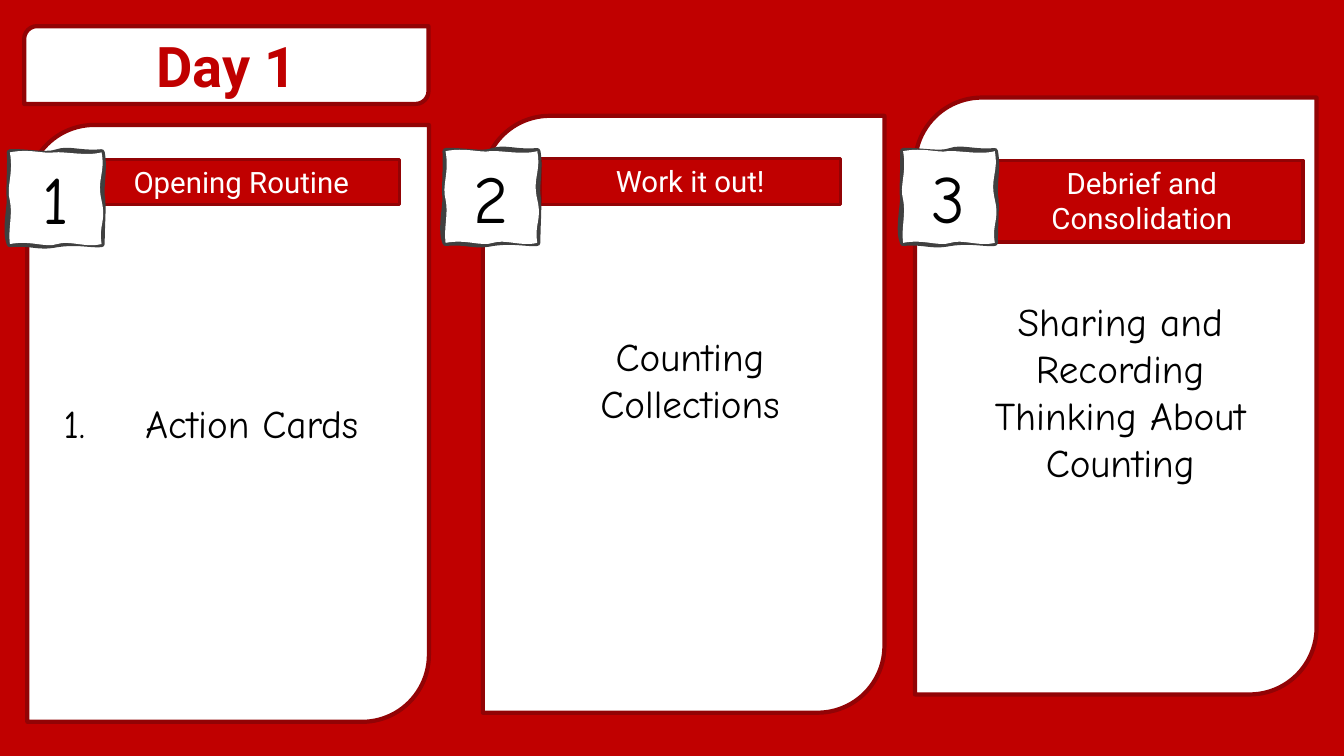
from dataclasses import dataclass

from pptx import Presentation
from pptx.dml.color import RGBColor
from pptx.enum.shapes import MSO_SHAPE as Preset
from pptx.enum.text import MSO_ANCHOR as Anchor, PP_ALIGN as Align
from pptx.oxml import parse_xml
from pptx.oxml.ns import nsdecls
from pptx.shapes.autoshape import Shape
from pptx.slide import Slide
from pptx.util import Cm, Pt


@dataclass(frozen=True)
class Theme:
    red: str = "C00000"
    dark_red: str = "920305"
    white: str = "FFFFFF"
    black: str = "000000"
    grey: str = "404040"
    heading_font: str = "Roboto"
    body_font: str = "Comic Neue"
    title_size: float = 40
    header_size: float = 21
    badge_size: float = 48
    body_size: float = 28
    panel_line: float = 3
    header_line: float = 2.25
    badge_line: float = 4.5


@dataclass(frozen=True)
class Area:
    """Left, top, width and height in centimetres."""
    left: float
    top: float
    width: float
    height: float

    def lengths(self) -> tuple[Cm, Cm, Cm, Cm]:
        return Cm(self.left), Cm(self.top), Cm(self.width), Cm(self.height)


@dataclass(frozen=True)
class TextStyle:
    font: str
    size: float
    color: str
    bold: bool = False
    anchor: Anchor = Anchor.TOP


@dataclass(frozen=True)
class Activity:
    panel: Area
    header: Area
    badge: tuple[float, float]
    body: Area
    heading: str
    text: str
    numbered: bool = False
    bottom_inset: float = 0.13


THEME = Theme()
TITLE = TextStyle(THEME.heading_font, THEME.title_size, THEME.red, True, Anchor.MIDDLE)
HEADER = TextStyle(THEME.heading_font, THEME.header_size, THEME.white)
BADGE = TextStyle(THEME.body_font, THEME.badge_size, THEME.black)
BODY = TextStyle(THEME.body_font, THEME.body_size, THEME.black, anchor=Anchor.MIDDLE)

TITLE_AREA = Area(0.61, 0.66, 10.19, 1.96)
PANEL_WIDTH, PANEL_HEIGHT = 10.12, 15.04
BADGE_SIDE = 2.31
BADGE_UNITS = 91
NUMBER_INDENT = 2.06

ACTIVITIES = [
    Activity(Area(0.69, 3.15, PANEL_WIDTH, PANEL_HEIGHT), Area(2.08, 4.01, 8, 1.14),
             (0.25, 3.84), Area(0.69, 9.93, 9.25, 1.45),
             "Opening Routine", "Action Cards", numbered=True),
    Activity(Area(12.17, 2.92, PANEL_WIDTH, PANEL_HEIGHT), Area(13.61, 3.99, 7.57, 1.17),
             (11.23, 3.81), Area(13.34, 8.13, 8.1, 4.01),
             "Work it out!", "Counting Collections", bottom_inset=1.3),
    Activity(Area(23.06, 2.46, PANEL_WIDTH, PANEL_HEIGHT), Area(24.71, 4.04, 8.13, 2.06),
             (22.76, 3.81), Area(24.18, 7.32, 8.1, 6.25),
             "Debrief and Consolidation", "Sharing and Recording Thinking About Counting",
             bottom_inset=1.3),
]

# Wavy badge edges: each curve is two control points and an end point
Curve = tuple[int, int, int, int, int, int]
STROKE_EDGE: list[Curve] = [
    (14, -1, 37, 4, 47, 0), (58, -4, 71, 2, 91, 0),
    (94, 15, 90, 34, 91, 43), (93, 53, 91, 70, 91, 91),
    (80, 92, 68, 88, 47, 91), (27, 95, 23, 89, 0, 91),
    (-5, 79, 0, 57, 0, 47), (-1, 37, 1, 10, 0, 0),
]
FILL_EDGE: list[Curve] = [
    (20, -4, 35, 2, 44, 0), (54, -1, 77, 4, 91, 0),
    (95, 21, 86, 26, 91, 48), (96, 69, 88, 71, 91, 91),
    (75, 95, 59, 87, 47, 91), (35, 95, 21, 87, 0, 91),
    (-2, 76, 3, 62, 0, 48), (-4, 34, 4, 22, 0, 0),
]


def rgb(color: str) -> RGBColor:
    return RGBColor.from_string(color)


def paint(shape: Shape, fill: str, line: str, weight: float) -> None:
    shape.shadow.inherit = False
    shape.fill.solid()
    shape.fill.fore_color.rgb = rgb(fill)
    shape.line.color.rgb = rgb(line)
    shape.line.width = Pt(weight)


def write(shape: Shape, text: str, style: TextStyle) -> None:
    frame = shape.text_frame
    frame.word_wrap = True
    frame.vertical_anchor = style.anchor
    para = frame.paragraphs[0]
    para.text = text
    para.alignment = Align.CENTER
    para.font.name = style.font
    para.font.size = Pt(style.size)
    para.font.bold = style.bold
    para.font.color.rgb = rgb(style.color)


def add_block(page: Slide, preset: Preset, area: Area, fill: str, weight: float) -> Shape:
    block = page.shapes.add_shape(preset, *area.lengths())
    paint(block, fill, THEME.dark_red, weight)
    return block


def path_xml(curves: list[Curve], flag: str) -> str:
    segments = "".join(
        "<a:cubicBezTo>"
        + "".join(f'<a:pt x="{x}" y="{y}"/>' for x, y in zip(curve[::2], curve[1::2]))
        + "</a:cubicBezTo>"
        for curve in curves
    )
    return (f'<a:path w="{BADGE_UNITS}" h="{BADGE_UNITS}" {flag}>'
            f'<a:moveTo><a:pt x="0" y="0"/></a:moveTo>{segments}<a:close/></a:path>')


def add_badge(page: Slide, left: float, top: float, number: int) -> None:
    builder = page.shapes.build_freeform(0, 0, scale=Cm(BADGE_SIDE) / BADGE_UNITS)
    builder.add_line_segments(
        [(BADGE_UNITS, 0), (BADGE_UNITS, BADGE_UNITS), (0, BADGE_UNITS)], close=True)
    badge = builder.convert_to_shape(Cm(left), Cm(top))
    # The fill lies over the stroke, which gives a line of uneven width
    edges = path_xml(STROKE_EDGE, 'fill="none"') + path_xml(FILL_EDGE, 'stroke="0"')
    outline = badge._element.xpath(".//a:pathLst")[0]
    outline.getparent().replace(
        outline, parse_xml(f'<a:pathLst {nsdecls("a")}>{edges}</a:pathLst>'))
    paint(badge, THEME.white, THEME.grey, THEME.badge_line)
    write(badge, str(number), BADGE)


def add_body(page: Slide, activity: Activity) -> None:
    box = page.shapes.add_textbox(*activity.body.lengths())
    write(box, activity.text, BODY)
    box.text_frame.margin_bottom = Cm(activity.bottom_inset)
    if activity.numbered:
        properties = box.text_frame.paragraphs[0]._p.get_or_add_pPr()
        properties.set("marL", str(int(Cm(NUMBER_INDENT))))
        properties.set("indent", str(-int(Cm(NUMBER_INDENT))))
        properties.insert(0, parse_xml(
            f'<a:buAutoNum {nsdecls("a")} type="arabicPeriod"/>'))


def add_activity(page: Slide, activity: Activity, number: int) -> None:
    add_block(page, Preset.ROUND_2_DIAG_RECTANGLE, activity.panel, THEME.white, THEME.panel_line)
    header = add_block(page, Preset.RECTANGLE, activity.header, THEME.red, THEME.header_line)
    write(header, activity.heading, HEADER)
    add_badge(page, *activity.badge, number)
    add_body(page, activity)


def main() -> None:
    deck = Presentation()
    deck.slide_width, deck.slide_height = Cm(33.87), Cm(19.05)
    page = deck.slides.add_slide(deck.slide_layouts[6])
    page.background.fill.solid()
    page.background.fill.fore_color.rgb = rgb(THEME.red)

    # Day title
    title = add_block(page, Preset.ROUND_2_DIAG_RECTANGLE, TITLE_AREA,
                      THEME.white, THEME.panel_line)
    write(title, "Day 1", TITLE)

    # Activity columns
    for number, activity in enumerate(ACTIVITIES, start=1):
        add_activity(page, activity, number)

    deck.save("out.pptx")


if __name__ == "__main__":
    main()
